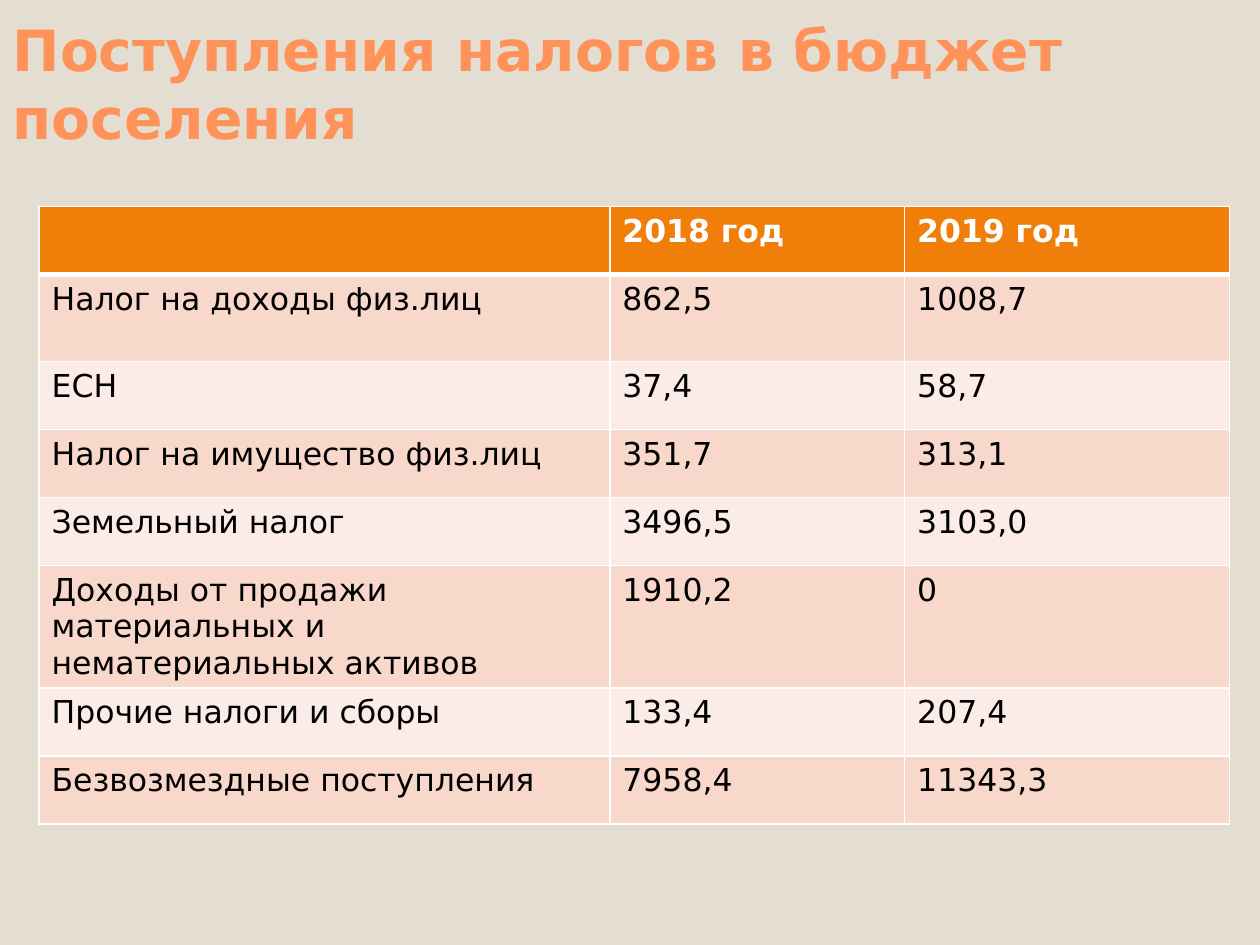
import pptx
import pptx.util
import pptx.dml.color
import pptx.enum.text
import lxml.etree

Inches = pptx.util.Inches
Pt = pptx.util.Pt
RGB = pptx.dml.color.RGBColor
SAND = RGB(0xE3, 0xDE, 0xD1)
CORAL = RGB(0xFF, 0x92, 0x58)
ORANGE = RGB(0xF0, 0x7F, 0x09)
ROSE = RGB(0xF9, 0xD8, 0xCC)
PALE = RGB(0xFC, 0xEC, 0xE7)
WHITE = RGB(0xFF, 0xFF, 0xFF)
BLACK = RGB(0, 0, 0)
FACE = "DejaVu Sans"
NS = "http://schemas.openxmlformats.org/drawingml/2006/main"

ROWS = [
    ("", "2018 год", "2019 год"),
    ("Налог на доходы физ.лиц", "862,5", "1008,7"),
    ("ЕСН", "37,4", "58,7"),
    ("Налог на имущество физ.лиц", "351,7", "313,1"),
    ("Земельный налог", "3496,5", "3103,0"),
    ("Доходы от продажи материальных и нематериальных активов", "1910,2", "0"),
    ("Прочие налоги и сборы", "133,4", "207,4"),
    ("Безвозмездные поступления", "7958,4", "11343,3"),
]
WIDTHS = [4.53, 2.34, 2.58]
HIGH = 0.54
TALL = {1: 0.69}


def style(frame, size, color, bold):
    for para in frame.paragraphs:
        para.alignment = pptx.enum.text.PP_ALIGN.LEFT
        for run in para.runs:
            run.font.name = FACE
            run.font.size = Pt(size)
            run.font.bold = bold
            run.font.color.rgb = color


def border(cell, base):
    props = cell._tc.get_or_add_tcPr()
    sides = {"lnL": 1, "lnR": 1, "lnT": 1, "lnB": base}
    for spot, (side, wide) in enumerate(sides.items()):
        line = lxml.etree.Element(f"{{{NS}}}{side}", w=str(Pt(wide)))
        fill = lxml.etree.SubElement(line, f"{{{NS}}}solidFill")
        lxml.etree.SubElement(fill, f"{{{NS}}}srgbClr", val=str(WHITE))
        props.insert(spot, line)


deck = pptx.Presentation()
deck.slide_width = Inches(10)
deck.slide_height = Inches(7.5)
slide = deck.slides.add_slide(deck.slide_layouts[5])
slide.background.fill.solid()
slide.background.fill.fore_color.rgb = SAND

title = slide.shapes.title
title.left, title.top = Inches(0), Inches(0.25)
title.width, title.height = Inches(9.77), Inches(1)
frame = title.text_frame
frame.text = "Поступления налогов в бюджет поселения"
frame.auto_size = pptx.enum.text.MSO_AUTO_SIZE.NONE
frame.vertical_anchor = pptx.enum.text.MSO_ANCHOR.BOTTOM
style(frame, 32.4, CORAL, True)

shape = slide.shapes.add_table(
    len(ROWS), len(WIDTHS), Inches(0.31), Inches(1.64),
    Inches(sum(WIDTHS)), Inches(HIGH * len(ROWS)))
table = shape.table
for col, width in zip(table.columns, WIDTHS):
    col.width = Inches(width)

for r, texts in enumerate(ROWS):
    head = r == 0
    table.rows[r].height = Inches(TALL.get(r, HIGH))
    for c, text in enumerate(texts):
        cell = table.cell(r, c)
        cell.text_frame.text = text
        style(cell.text_frame, 18, WHITE if head else BLACK, head)
        cell.fill.solid()
        cell.fill.fore_color.rgb = ORANGE if head else ROSE if r % 2 else PALE
        border(cell, 3 if head else 1)
    if r == 1:
        for c in range(len(WIDTHS)):
            table.cell(r, c)._tc.tcPr.find(f"{{{NS}}}lnT").set("w", str(Pt(3)))

deck.save("out.pptx")
